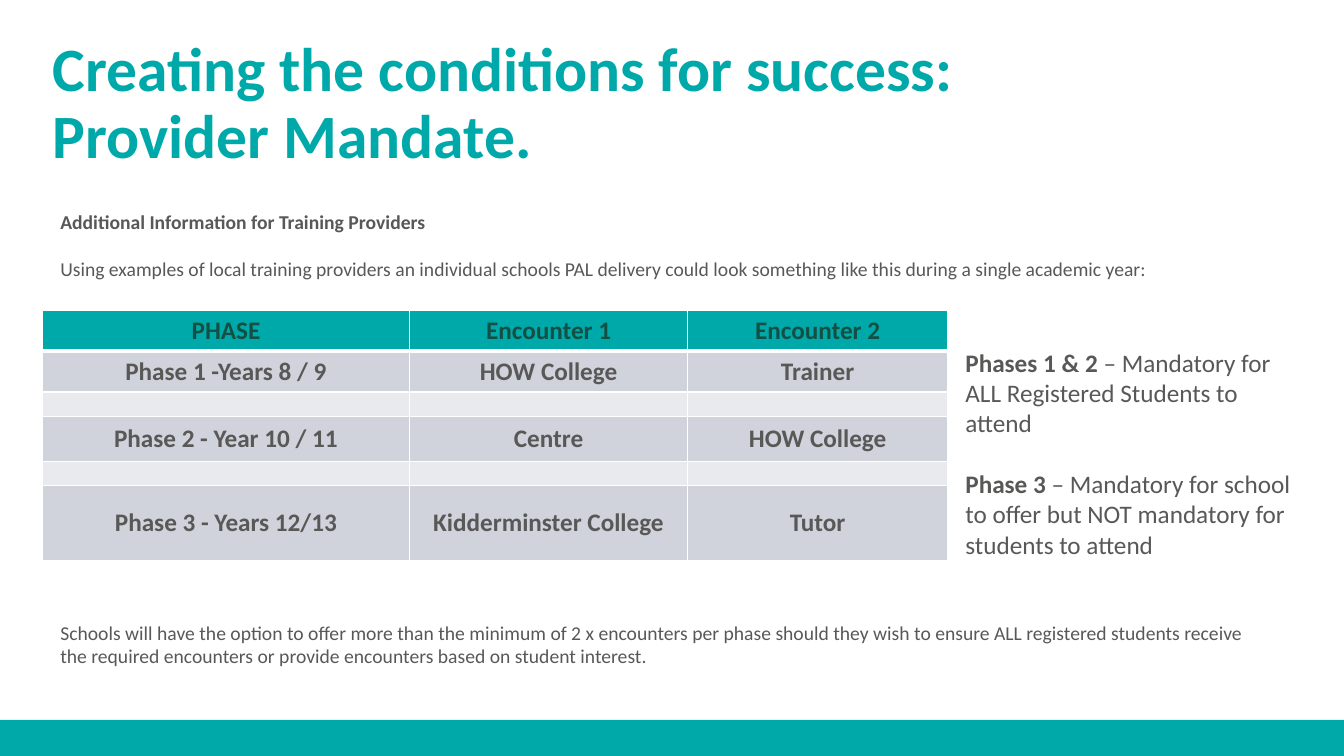
from lxml import etree
from pptx import Presentation
from pptx.dml.color import RGBColor
from pptx.enum.shapes import MSO_SHAPE
from pptx.enum.text import MSO_ANCHOR, MSO_AUTO_SIZE, PP_ALIGN
from pptx.oxml.ns import qn
from pptx.util import Cm, Pt

RECTANGLE = MSO_SHAPE.RECTANGLE
MIDDLE = MSO_ANCHOR.MIDDLE
LEFT, CENTER = PP_ALIGN.LEFT, PP_ALIGN.CENTER
NO_AUTOFIT = MSO_AUTO_SIZE.NONE

TEAL, DARK_GREEN, GREY = "00A9A9", "134F44", "585857"
WHITE, BAND, PALE_BAND = "FFFFFF", "D0D2DC", "E9EAEE"


def color(value):
    return RGBColor.from_string(value)


class SlideBuilder:
    font_name = "Calibri"

    def __init__(self, presentation):
        self.slide = presentation.slides.add_slide(presentation.slide_layouts[5])

    def run(self, paragraph, text, size, hex_color=GREY, bold=False):
        run = paragraph.add_run()
        run.text = text
        run.font.name = self.font_name
        run.font.size = Pt(size)
        run.font.bold = bold
        run.font.color.rgb = color(hex_color)

    def bar(self, left, top, width, height):
        shape = self.slide.shapes.add_shape(
            RECTANGLE, Cm(left), Cm(top), Cm(width), Cm(height))
        shape.shadow.inherit = False
        shape.fill.solid()
        shape.fill.fore_color.rgb = color(TEAL)
        shape.line.fill.background()

    def title(self, lines, left, top, width, height):
        title = self.slide.shapes.title
        title.left, title.top = Cm(left), Cm(top)
        title.width, title.height = Cm(width), Cm(height)
        frame = title.text_frame
        frame.auto_size = NO_AUTOFIT
        frame.vertical_anchor = MIDDLE
        paragraph = frame.paragraphs[0]
        paragraph.alignment = LEFT
        paragraph.line_spacing = 0.9
        for index, line in enumerate(lines):
            if index:
                paragraph.add_line_break()
            self.run(paragraph, line, 44, TEAL, True)

    def text(self, paragraphs, left, top, width, height, size, gap=0,
             margin_left=0.25, margin_top=0.13):
        box = self.slide.shapes.add_textbox(
            Cm(left), Cm(top), Cm(width), Cm(height))
        frame = box.text_frame
        frame.word_wrap = True
        frame.margin_left, frame.margin_top = Cm(margin_left), Cm(margin_top)
        for index, runs in enumerate(paragraphs):
            paragraph = frame.add_paragraph() if index else frame.paragraphs[0]
            if index:
                paragraph.space_before = Pt(gap)
            for text, bold in runs:
                self.run(paragraph, text, size, bold=bold)

    def borders(self, cell, top, bottom):
        properties = cell._tc.get_or_add_tcPr()
        sides = (("lnL", 1), ("lnR", 1), ("lnT", top), ("lnB", bottom))
        for index, (side, width) in enumerate(sides):
            line = etree.Element(qn(f"a:{side}"), w=str(Pt(width)))
            fill = etree.SubElement(line, qn("a:solidFill"))
            etree.SubElement(fill, qn("a:srgbClr"), val=WHITE)
            properties.insert(index, line)

    def cell(self, cell, text, row):
        cell.fill.solid()
        fill = TEAL if row == 0 else BAND if row % 2 else PALE_BAND
        cell.fill.fore_color.rgb = color(fill)
        cell.vertical_anchor = MIDDLE
        paragraph = cell.text_frame.paragraphs[0]
        paragraph.alignment = CENTER
        if text:
            self.run(paragraph, text, 18, GREY if row else DARK_GREEN, True)
        else:
            cell.margin_top = cell.margin_bottom = 0
            etree.SubElement(paragraph._p, qn("a:endParaRPr"), sz="800")
        self.borders(cell, 3 if row == 1 else 1, 1 if row else 3)

    def table(self, rows, left, top, widths, heights):
        table = self.slide.shapes.add_table(
            len(rows), len(widths), Cm(left), Cm(top),
            Cm(sum(widths)), Cm(sum(heights))).table
        for column, width in zip(table.columns, widths):
            column.width = Cm(width)
        for row_index, (values, height) in enumerate(zip(rows, heights)):
            table.rows[row_index].height = Cm(height)
            for column_index, value in enumerate(values):
                self.cell(table.cell(row_index, column_index), value, row_index)


def main():
    presentation = Presentation()
    presentation.slide_width, presentation.slide_height = Cm(33.87), Cm(19.05)
    builder = SlideBuilder(presentation)

    builder.bar(0, 18.14, 33.87, 0.91)
    builder.title(["Creating the conditions for success:", "Provider Mandate."],
                  1.07, 0.81, 29.21, 3.68)
    builder.text([
        [("Additional Information for Training Providers", True)],
        [("Using examples of local training providers an individual schools PAL "
          "delivery could look something like this during a single academic year:",
          False)],
    ], 0, 5.16, 32.03, 2.64, 14, gap=17, margin_left=1.52)

    spacer = ("", "", "")
    builder.table([
        ("PHASE", "Encounter 1", "Encounter 2"),
        ("Phase 1 -Years 8 / 9", "HOW College", "Trainer"),
        spacer,
        ("Phase 2 - Year 10 / 11", "Centre", "HOW College"),
        spacer,
        ("Phase 3 - Years 12/13", "Kidderminster College", "Tutor"),
    ], 1.07, 7.82, (9.25, 7.01, 6.55), (1.03, 1.03, 0.61, 1.14, 0.61, 1.88))

    builder.text([
        [("Phases 1 & 2 ", True),
         ("– Mandatory for ALL Registered Students to attend", False)],
        [("Phase 3 ", True),
         ("– Mandatory for school to offer but NOT mandatory for students to attend",
          False)],
    ], 24.08, 8.61, 8.71, 5.64, 18, gap=22)
    builder.text([
        [("Schools will have the option to offer more than the minimum of 2 x "
          "encounters per phase should they wish to ensure ALL registered students "
          "receive the required encounters or provide encounters based on student "
          "interest.", False)],
    ], 0, 14.91, 32.03, 2.64, 14, margin_left=1.52, margin_top=0.73)

    presentation.save("out.pptx")


if __name__ == "__main__":
    main()
